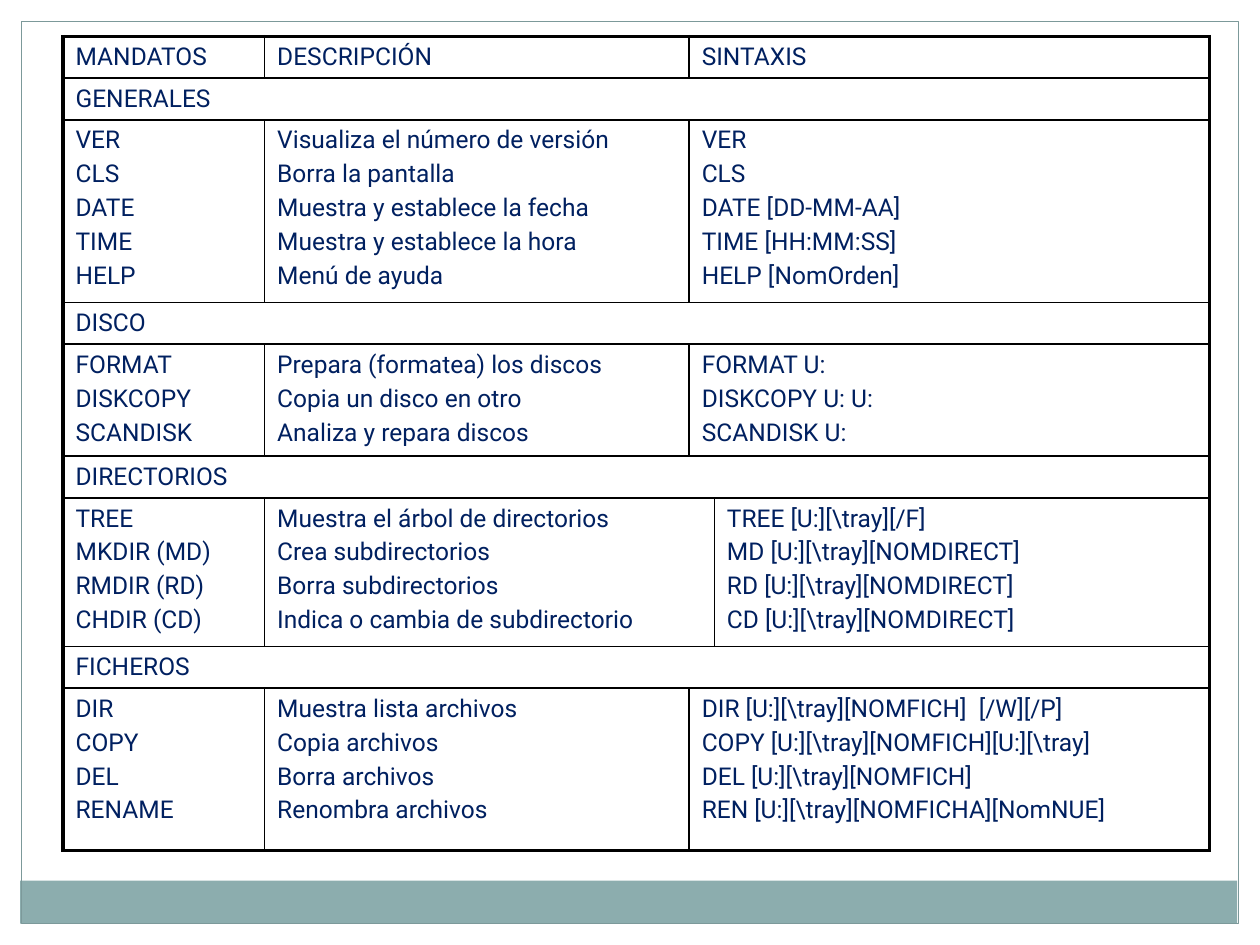
"""Build a slide with a table of DOS commands grouped by purpose."""
from lxml import etree
from pptx import Presentation
from pptx.dml.color import RGBColor
from pptx.enum.shapes import MSO_SHAPE
from pptx.oxml.ns import qn
from pptx.util import Inches, Pt

RECTANGLE = MSO_SHAPE.RECTANGLE
FONT = "Roboto"
THIN, THICK = Pt(1), Pt(2.25)
COLORS = {
    "white": "FFFFFF",
    "band": "8CADAE",
    "frame": "7C999A",
    "text": "002060",
    "border": "000000",
}

BANDS = [
    (0, 0, 10, 0.17, "white"),
    (9.83, 0, 0.17, 7.5, "white"),
    (0, 0, 0.17, 7.5, "white"),
    (0.16, 6.99, 9.66, 0.34, "band"),
]
COLUMN_WIDTHS = [1.6, 3.37, 0.2, 3.93]
ROW_HEIGHTS = [0.33, 0.33, 1.45, 0.33, 0.89, 0.33, 1.18, 0.33, 1.29]

TITLE_SPANS = [4]
USUAL_SPANS = [1, 1, 2]
WIDE_SPANS = [1, 2, 1]

ROWS = [
    (USUAL_SPANS, [("MANDATOS", "DESCRIPCIÓN", "SINTAXIS")]),
    (TITLE_SPANS, [("GENERALES",)]),
    (USUAL_SPANS, [
        ("VER", "Visualiza el número de versión", "VER"),
        ("CLS", "Borra la pantalla", "CLS"),
        ("DATE", "Muestra y establece la fecha", "DATE [DD-MM-AA]"),
        ("TIME", "Muestra y establece la hora", "TIME [HH:MM:SS]"),
        ("HELP", "Menú de ayuda", "HELP [NomOrden]"),
    ]),
    (TITLE_SPANS, [("DISCO",)]),
    (USUAL_SPANS, [
        ("FORMAT", "Prepara (formatea) los discos", "FORMAT U:"),
        ("DISKCOPY", "Copia un disco en otro", "DISKCOPY U: U:"),
        ("SCANDISK", "Analiza y repara discos", "SCANDISK U:"),
    ]),
    (TITLE_SPANS, [("DIRECTORIOS",)]),
    (WIDE_SPANS, [
        ("TREE", "Muestra el árbol de directorios", r"TREE [U:][\tray][/F]"),
        ("MKDIR (MD)", "Crea subdirectorios", r"MD [U:][\tray][NOMDIRECT]"),
        ("RMDIR (RD)", "Borra subdirectorios", r"RD [U:][\tray][NOMDIRECT]"),
        ("CHDIR (CD)", "Indica o cambia de subdirectorio", r"CD [U:][\tray][NOMDIRECT]"),
    ]),
    (TITLE_SPANS, [("FICHEROS",)]),
    (USUAL_SPANS, [
        ("DIR", "Muestra lista archivos", r"DIR [U:][\tray][NOMFICH]  [/W][/P]"),
        ("COPY", "Copia archivos", r"COPY [U:][\tray][NOMFICH][U:][\tray]"),
        ("DEL", "Borra archivos", r"DEL [U:][\tray][NOMFICH]"),
        ("RENAME", "Renombra archivos", r"REN [U:][\tray][NOMFICHA][NomNUE]"),
    ]),
]


def set_borders(cell, widths):
    properties = cell._tc.get_or_add_tcPr()
    for position, (side, width) in enumerate(widths.items()):
        line = etree.Element(qn("a:" + side), w=str(width))
        fill = etree.SubElement(line, qn("a:solidFill"))
        etree.SubElement(fill, qn("a:srgbClr"), val=COLORS["border"])
        properties.insert(position, line)


def write_lines(cell, lines):
    for index, line in enumerate(lines):
        frame = cell.text_frame
        para = frame.add_paragraph() if index else frame.paragraphs[0]
        para.text = line
        para.space_before = Pt(2.8 if index else 0)
        para.font.name = FONT
        para.font.size = Pt(14)
        para.font.color.rgb = RGBColor.from_string(COLORS["text"])


deck = Presentation()
deck.slide_width, deck.slide_height = Inches(10), Inches(7.5)
page = deck.slides.add_slide(deck.slide_layouts[6])

for left, top, width, height, color in BANDS:
    band = page.shapes.add_shape(
        RECTANGLE, Inches(left), Inches(top), Inches(width), Inches(height))
    band.shadow.inherit = False
    band.fill.solid()
    band.fill.fore_color.rgb = RGBColor.from_string(COLORS[color])
    band.line.fill.background()

frame_box = page.shapes.add_shape(
    RECTANGLE, Inches(0.17), Inches(0.17), Inches(9.66), Inches(7.16))
frame_box.shadow.inherit = False
frame_box.fill.background()
frame_box.line.color.rgb = RGBColor.from_string(COLORS["frame"])
frame_box.line.width = Pt(0.75)

table = page.shapes.add_table(
    len(ROW_HEIGHTS), len(COLUMN_WIDTHS), Inches(0.5), Inches(0.29),
    Inches(sum(COLUMN_WIDTHS)), Inches(sum(ROW_HEIGHTS))).table
table.first_row = False
table.horz_banding = False
for column, width in zip(table.columns, COLUMN_WIDTHS):
    column.width = Inches(width)
for row, height in zip(table.rows, ROW_HEIGHTS):
    row.height = Inches(height)

last_row = len(ROWS) - 1
for row, (spans, entries) in enumerate(ROWS):
    start = 0
    for span, lines in zip(spans, zip(*entries)):
        end = start + span - 1
        origin = table.cell(row, start)
        if span > 1:
            origin.merge(table.cell(row, end))
        write_lines(origin, lines)
        for column in range(start, end + 1):
            cell = table.cell(row, column)
            cell.fill.background()
            borders = {}
            if column == start:
                borders["lnL"] = THIN if start else THICK
            if column in (start, end):
                borders["lnR"] = THICK if end == len(COLUMN_WIDTHS) - 1 else THIN
            borders["lnT"] = THIN if row else THICK
            borders["lnB"] = THICK if row == last_row else THIN
            set_borders(cell, borders)
        start = end + 1

deck.save("out.pptx")
